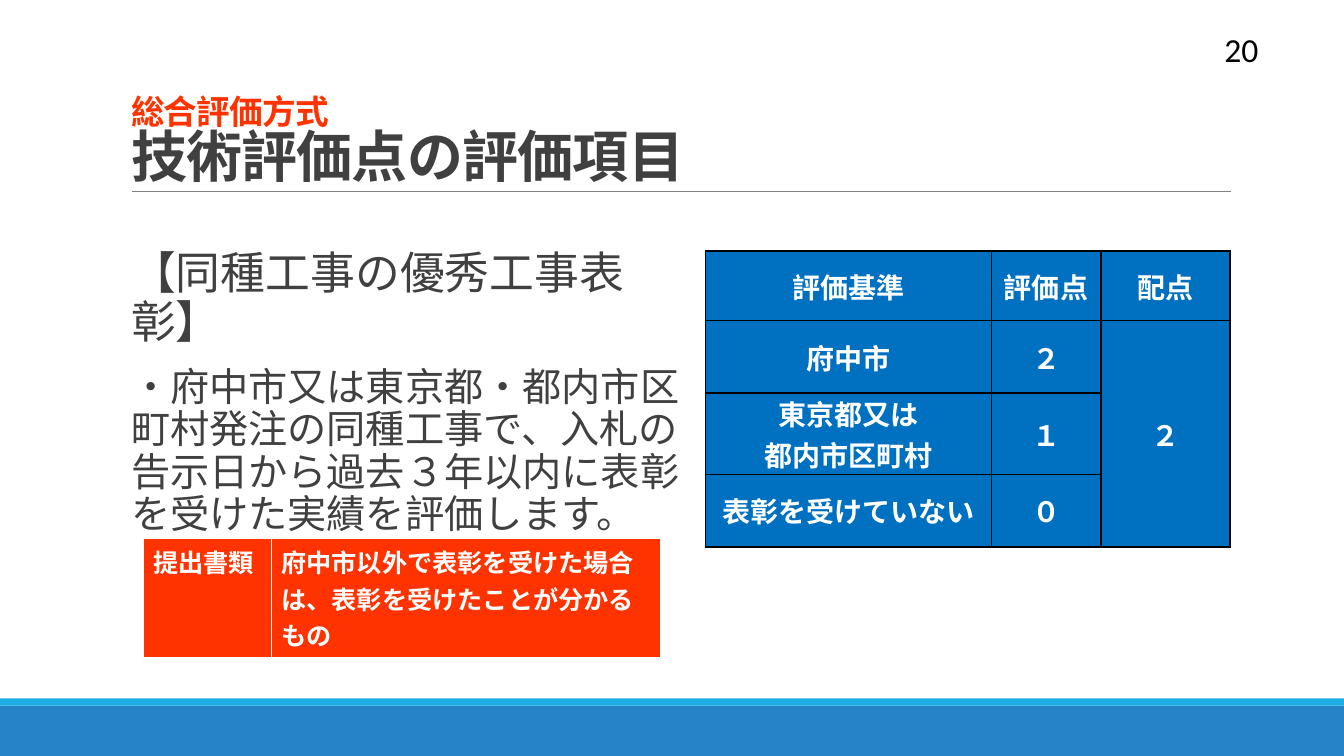
from dataclasses import dataclass

from pptx import Presentation
from pptx.dml.color import RGBColor
from pptx.enum import shapes, text
from pptx.oxml import parse_xml
from pptx.oxml.ns import nsdecls
from pptx.util import Inches, Pt


@dataclass(frozen=True)
class Theme:
    """Colours, fonts and type sizes of the slide."""
    ink: str = "404040"
    black: str = "000000"
    white: str = "FFFFFF"
    accent: str = "FF3300"
    table: str = "0070C0"
    band: str = "2683C6"
    stripe: str = "1CADE4"
    rule: str = "808080"
    latin: str = "Calibri"
    japanese: str = "Noto Sans CJK JP"
    title: int = 40
    heading: int = 32
    body: int = 28
    label: int = 24
    criteria: int = 20
    papers: int = 18


THEME = Theme()
TITLE = [("総合評価方式", THEME.label, THEME.accent),
         ("技術評価点の評価項目", THEME.title, THEME.ink)]
BODY = [("【同種工事の優秀工事表彰】", THEME.heading, THEME.ink),
        ("•府中市又は東京都•都内市区町村発注の同種工事で、入札の告示日から"
         "過去３年以内に表彰を受けた実績を評価します。", THEME.body, THEME.ink)]
CRITERIA = [["評価基準", "評価点", "配点"],
            ["府中市", "２", "２"],
            ["東京都又は\n都内市区町村", "１", ""],
            ["表彰を受けていない", "０", ""]]
PAPERS = [["提出書類", "府中市以外で表彰を受けた場合は、表彰を受けたことが分かるもの"]]
PAGE = "20"
BANDS = [(7, 0.5, THEME.band), (6.93, 0.07, THEME.stripe)]
WIDTH, HEIGHT = 13.33, 7.5


def write(frame, lines, font=THEME.latin, bold=False, align=text.PP_ALIGN.LEFT,
          spacing=1.0, before=0, after=0, indent=0, tracking=0):
    """Write each (words, size, colour) line as one paragraph."""
    frame.word_wrap = True
    for number, (words, size, colour) in enumerate(lines):
        paragraph = frame.add_paragraph() if number else frame.paragraphs[0]
        paragraph.alignment = align
        paragraph.line_spacing = spacing
        paragraph.space_before = Pt(before if number else 0)
        paragraph.space_after = Pt(after)
        properties = paragraph._p.get_or_add_pPr()
        properties.set("marL", str(Inches(indent)))
        properties.set("indent", "0")
        properties.append(parse_xml(f"<a:buNone {nsdecls('a')}/>"))
        run = paragraph.add_run()
        run.text = words
        run.font.name = font
        run.font.size = Pt(size)
        run.font.bold = bold
        run.font.color.rgb = RGBColor.from_string(colour)
        if tracking:
            run._r.get_or_add_rPr().set("spc", str(int(tracking * 100)))
        if font == THEME.japanese:
            run.font._element.append(
                parse_xml(f'<a:ea {nsdecls("a")} typeface="{font}"/>'))


def place(shape, left, top, width, height):
    """Move and size a shape in inches."""
    shape.left, shape.top = Inches(left), Inches(top)
    shape.width, shape.height = Inches(width), Inches(height)


def border(cell, colour):
    """Draw a one-point line on all sides of a cell."""
    properties = cell._tc.get_or_add_tcPr()
    for index, side in enumerate(("lnL", "lnR", "lnT", "lnB")):
        properties.insert(index, parse_xml(
            f'<a:{side} {nsdecls("a")} w="{Pt(1)}"><a:solidFill>'
            f'<a:srgbClr val="{colour}"/></a:solidFill></a:{side}>'))


def add_grid(slide, rows, left, top, widths, heights, fill, line, size,
             anchor, margins, **style):
    """Add a filled and ruled table of bold white text."""
    grid = slide.shapes.add_table(
        len(rows), len(widths), Inches(left), Inches(top),
        Inches(sum(widths)), Inches(sum(heights))).table
    grid.first_row = grid.horz_banding = False
    for column, width in zip(grid.columns, widths):
        column.width = Inches(width)
    for row, height, entries in zip(grid.rows, heights, rows):
        row.height = Inches(height)
        for cell, entry in zip(row.cells, entries):
            cell.fill.solid()
            cell.fill.fore_color.rgb = RGBColor.from_string(fill)
            cell.vertical_anchor = anchor
            cell.margin_left = cell.margin_right = Inches(margins[0])
            cell.margin_top = cell.margin_bottom = Inches(margins[1])
            border(cell, line)
            if entry:
                write(cell.text_frame,
                      [(words, size, THEME.white) for words in entry.split("\n")],
                      bold=True, **style)
    return grid


def main():
    """Build the slide and save it."""
    deck = Presentation()
    deck.slide_width, deck.slide_height = Inches(WIDTH), Inches(HEIGHT)
    slide = deck.slides.add_slide(deck.slide_layouts[1])

    for top, height, colour in BANDS:
        band = slide.shapes.add_shape(
            shapes.MSO_SHAPE.RECTANGLE, 0, Inches(top), Inches(WIDTH), Inches(height))
        band.shadow.inherit = False
        band.fill.solid()
        band.fill.fore_color.rgb = RGBColor.from_string(colour)
        band.line.fill.background()

    rule = slide.shapes.add_connector(
        shapes.MSO_CONNECTOR.STRAIGHT, Inches(1.31), Inches(1.9), Inches(12.21), Inches(1.9))
    rule.line.color.rgb = RGBColor.from_string(THEME.rule)
    rule.line.width = Pt(0.5)
    rule._element.spPr.append(parse_xml(f"<a:effectLst {nsdecls('a')}/>"))

    title = slide.shapes.title
    place(title, 1.2, 0.33, 11, 1.59)
    title.text_frame.auto_size = text.MSO_AUTO_SIZE.NONE
    title.text_frame.vertical_anchor = text.MSO_ANCHOR.BOTTOM
    write(title.text_frame, TITLE, bold=True, spacing=0.85, tracking=-0.5)

    body = slide.placeholders[1]
    place(body, 1.2, 1.92, 5.69, 4.4)
    frame = body.text_frame
    frame.auto_size = text.MSO_AUTO_SIZE.NONE
    frame.vertical_anchor = text.MSO_ANCHOR.TOP
    frame.margin_left = frame.margin_right = 0
    frame.margin_top = Inches(0.57)
    write(frame, BODY, spacing=0.9, before=12, after=2, indent=0.1)

    criteria = add_grid(
        slide, CRITERIA, 7, 2.49, [2.83, 1.09, 1.28], [0.69, 0.72, 0.71, 0.72],
        THEME.table, THEME.black, THEME.criteria, text.MSO_ANCHOR.MIDDLE, (0.07, 0),
        font=THEME.japanese, align=text.PP_ALIGN.CENTER)
    criteria.cell(1, 2).merge(criteria.cell(3, 2))

    add_grid(slide, PAPERS, 1.42, 5.34, [1.27, 3.86], [1], THEME.accent, THEME.white,
             THEME.papers, text.MSO_ANCHOR.TOP, (0.1, 0.05))

    page = slide.shapes.add_textbox(Inches(11.15), Inches(0.29), Inches(1.43), Inches(0.4))
    page.text_frame.vertical_anchor = text.MSO_ANCHOR.MIDDLE
    write(page.text_frame, [(PAGE, THEME.label, THEME.black)], align=text.PP_ALIGN.RIGHT)

    deck.save("out.pptx")


if __name__ == "__main__":
    main()
